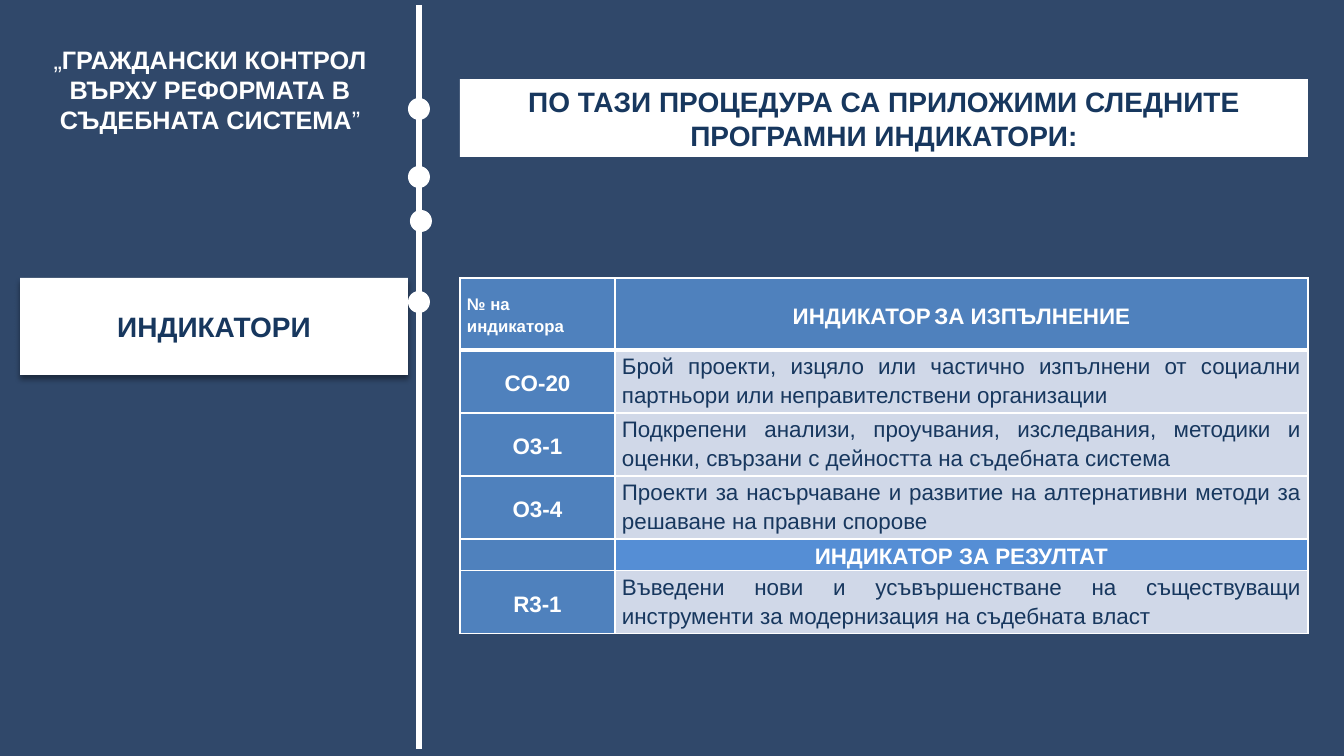
from dataclasses import dataclass

from lxml import etree
from pptx import Presentation
from pptx.dml.color import RGBColor
from pptx.enum.shapes import MSO_CONNECTOR, MSO_SHAPE
from pptx.enum.text import MSO_ANCHOR, PP_ALIGN
from pptx.oxml import parse_xml
from pptx.oxml.ns import nsdecls, qn
from pptx.slide import Slide
from pptx.table import _Cell
from pptx.text.text import TextFrame
from pptx.util import Pt

EMU_PER_PX = 914400 / 100.8
TITLE_ONLY = 5

NAVY = RGBColor(0x30, 0x48, 0x6A)
INK = RGBColor(0x17, 0x37, 0x5E)
WHITE = RGBColor(0xFF, 0xFF, 0xFF)
BLACK = RGBColor(0x00, 0x00, 0x00)
BLUE = RGBColor(0x4F, 0x81, 0xBD)
BRIGHT_BLUE = RGBColor(0x55, 0x8E, 0xD5)
PALE_BLUE = RGBColor(0xD0, 0xD8, 0xE8)

LEFT, CENTER, JUSTIFY = PP_ALIGN.LEFT, PP_ALIGN.CENTER, PP_ALIGN.JUSTIFY
TOP, MIDDLE = MSO_ANCHOR.TOP, MSO_ANCHOR.MIDDLE
RECTANGLE, OVAL = MSO_SHAPE.RECTANGLE, MSO_SHAPE.OVAL
STRAIGHT = MSO_CONNECTOR.STRAIGHT


@dataclass
class Box:
    left: int
    top: int
    width: int
    height: int

    def emu(self) -> tuple[int, int, int, int]:
        return px(self.left), px(self.top), px(self.width), px(self.height)


@dataclass
class Run:
    text: str
    size: int = 16
    color: RGBColor = WHITE
    bold: bool = True
    font: str = "Arial"


@dataclass
class CellStyle:
    fill: RGBColor
    align: PP_ALIGN = CENTER
    anchor: MSO_ANCHOR = MIDDLE


@dataclass
class Row:
    height: int
    code: Run
    description: list[Run]
    code_style: CellStyle
    description_style: CellStyle


CODE = CellStyle(BLUE)
BODY = CellStyle(PALE_BLUE, JUSTIFY, TOP)


def indicator(code: str, text: str) -> Row:
    return Row(63, Run(code), [Run(text, color=INK, bold=False)], CODE, BODY)


TITLE = "ПО ТАЗИ ПРОЦЕДУРА СА ПРИЛОЖИМИ СЛЕДНИТЕ ПРОГРАМНИ ИНДИКАТОРИ:"
PROGRAMME = [
    Run("„", 18, bold=False),
    Run("ГРАЖДАНСКИ КОНТРОЛ ВЪРХУ РЕФОРМАТА В СЪДЕБНАТА СИСТЕМА", 18),
    Run("”", 18, bold=False),
]
TIMELINE_X = 419
DOT_SIZE = 22
DOTS = [(408, 98), (408, 166), (410, 210), (408, 291)]
COLUMNS = [155, 693]
ROWS = [
    Row(72, Run("№ на индикатора", 12),
        [Run("ИНДИКАТОР"), Run(" ", 11, BLACK, font="Calibri"), Run("ЗА ИЗПЪЛНЕНИЕ")],
        CellStyle(BLUE, LEFT), CODE),
    indicator("CO-20", "Брой проекти, изцяло или частично изпълнени от социални "
              "партньори или неправителствени организации"),
    indicator("O3-1", "Подкрепени анализи, проучвания, изследвания, методики и "
              "оценки, свързани с дейността на съдебната система"),
    indicator("O3-4", "Проекти за насърчаване и развитие на алтернативни методи за "
              "решаване на правни спорове"),
    Row(31, Run(""), [Run("ИНДИКАТОР ЗА РЕЗУЛТАТ")], CODE, CellStyle(BRIGHT_BLUE)),
    indicator("R3-1", "Въведени нови и усъвършенстване на съществуващи "
              "инструменти за модернизация на съдебната власт"),
]


def px(length: int) -> int:
    return round(length * EMU_PER_PX)


def write(frame: TextFrame, runs: list[Run], align: PP_ALIGN = CENTER) -> None:
    frame.word_wrap = True
    paragraph = frame.paragraphs[0]
    paragraph.alignment = align
    for item in runs:
        run = paragraph.add_run()
        run.text = item.text
        run.font.name = item.font
        run.font.size = Pt(item.size)
        run.font.bold = item.bold
        run.font.color.rgb = item.color


def add_white_shape(slide: Slide, kind: MSO_SHAPE, box: Box):
    shape = slide.shapes.add_shape(kind, *box.emu())
    shape.shadow.inherit = False
    shape.fill.solid()
    shape.fill.fore_color.rgb = WHITE
    shape.line.fill.background()
    return shape


def add_section_label(slide: Slide, box: Box) -> None:
    shape = add_white_shape(slide, RECTANGLE, box)
    shape.text_frame.vertical_anchor = MIDDLE
    write(shape.text_frame, [Run("ИНДИКАТОРИ", 20, INK)])
    effects = shape._element.spPr.find(qn("a:effectLst"))
    effects.append(parse_xml(
        f'<a:outerShdw {nsdecls("a")} blurRad="{Pt(4)}" dist="{Pt(3)}" dir="5400000" '
        f'rotWithShape="0"><a:srgbClr val="{BLACK}"><a:alpha val="40000"/>'
        '</a:srgbClr></a:outerShdw>'))


def add_timeline(slide: Slide) -> None:
    x = px(TIMELINE_X)
    line = slide.shapes.add_connector(STRAIGHT, x, px(5), x, px(749))
    line.line.color.rgb = WHITE
    line.line.width = Pt(4.5)
    etree.SubElement(line._element.spPr, qn("a:effectLst"))
    for left, top in DOTS:
        add_white_shape(slide, OVAL, Box(left, top, DOT_SIZE, DOT_SIZE))


def set_borders(cell: _Cell, top: int, bottom: int) -> None:
    widths = {"lnL": 1, "lnR": 1, "lnT": top, "lnB": bottom}
    properties = cell._tc.get_or_add_tcPr()
    for position, (tag, width) in enumerate(widths.items()):
        properties.insert(position, parse_xml(
            f'<a:{tag} {nsdecls("a")} w="{Pt(width)}"><a:solidFill>'
            f'<a:srgbClr val="{WHITE}"/></a:solidFill></a:{tag}>'))


def fill_cell(cell: _Cell, runs: list[Run], style: CellStyle) -> None:
    cell.fill.solid()
    cell.fill.fore_color.rgb = style.fill
    cell.vertical_anchor = style.anchor
    cell.margin_left = cell.margin_right = px(7)
    cell.margin_top, cell.margin_bottom = px(1), 0
    if any(run.text for run in runs):
        write(cell.text_frame, runs, style.align)
        paragraph = cell.text_frame.paragraphs[0]
        paragraph.line_spacing = 1.15
        paragraph.space_after = Pt(10)


def add_indicator_table(slide: Slide, left: int, top: int) -> None:
    box = Box(left, top, sum(COLUMNS), sum(row.height for row in ROWS))
    table = slide.shapes.add_table(len(ROWS), len(COLUMNS), *box.emu()).table
    table.first_row = table.horz_banding = False
    for column, width in zip(table.columns, COLUMNS):
        column.width = px(width)
    for index, row in enumerate(ROWS):
        table.rows[index].height = px(row.height)
        fill_cell(table.cell(index, 0), [row.code], row.code_style)
        fill_cell(table.cell(index, 1), row.description, row.description_style)
        for cell in table.rows[index].cells:
            set_borders(cell, 3 if index == 1 else 1, 3 if index == 0 else 1)


def main() -> None:
    presentation = Presentation()
    presentation.slide_width, presentation.slide_height = px(1344), px(756)
    slide = presentation.slides.add_slide(presentation.slide_layouts[TITLE_ONLY])
    slide.background.fill.solid()
    slide.background.fill.fore_color.rgb = NAVY

    # Title band
    title = slide.shapes.title
    title.left, title.top, title.width, title.height = Box(460, 79, 848, 78).emu()
    title.fill.solid()
    title.fill.fore_color.rgb = WHITE
    write(title.text_frame, [Run(TITLE, 20, INK)])

    # Left column and timeline
    add_section_label(slide, Box(20, 278, 388, 97))
    add_timeline(slide)
    programme = slide.shapes.add_textbox(*Box(20, 39, 380, 102).emu())
    write(programme.text_frame, PROGRAMME)

    # Indicators
    add_indicator_table(slide, 460, 278)
    presentation.save("out.pptx")


if __name__ == "__main__":
    main()
